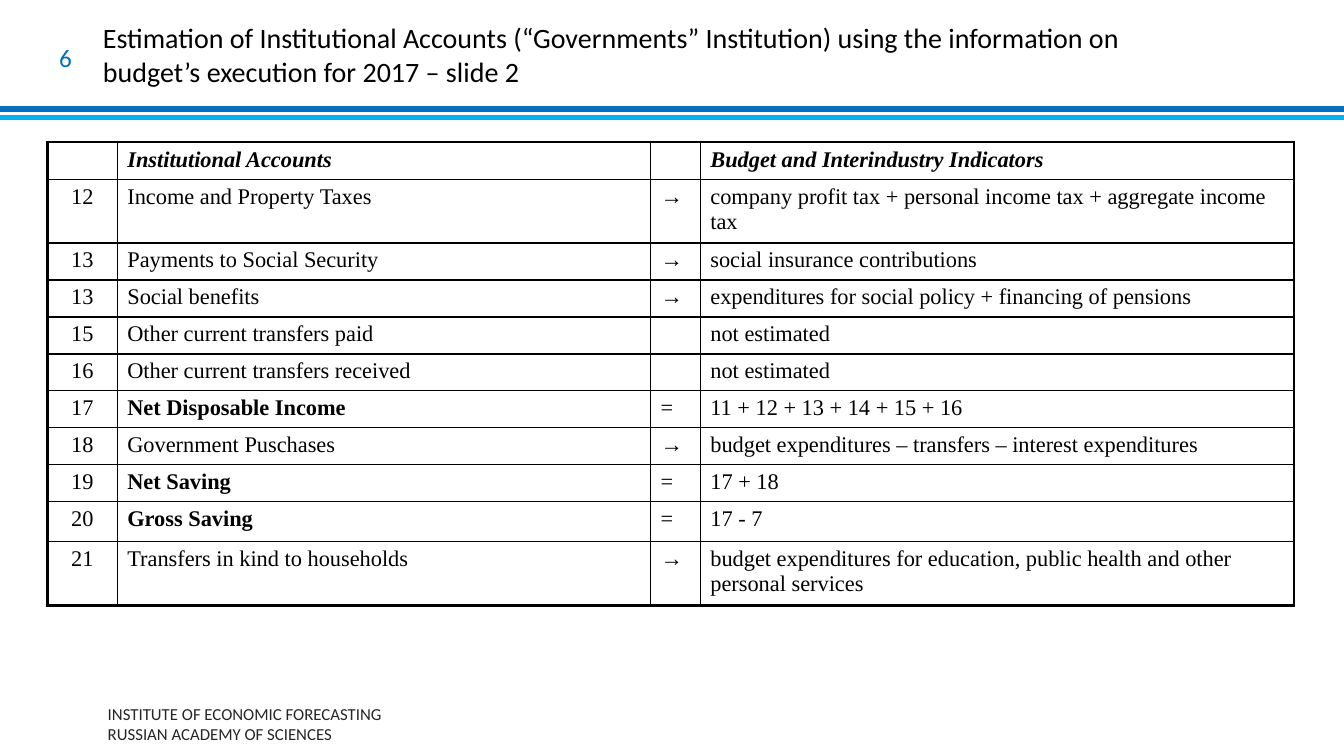
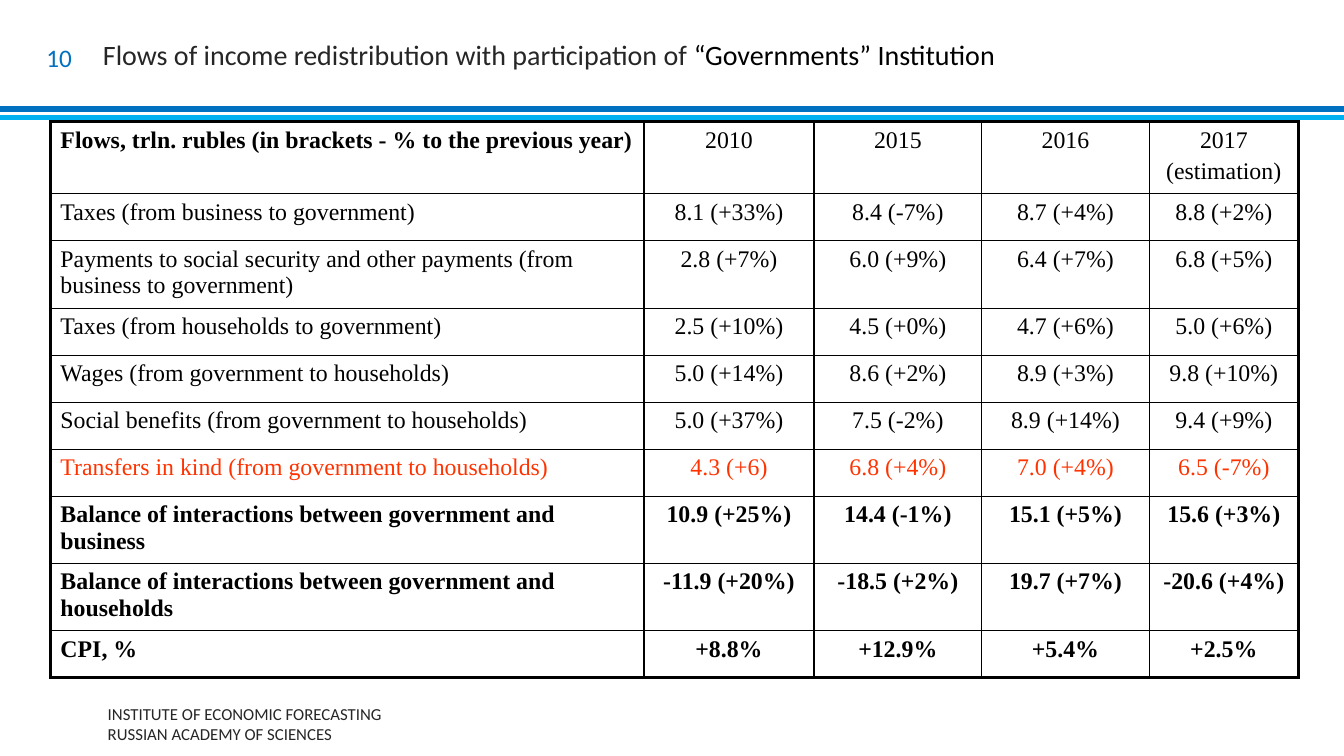
from dataclasses import dataclass

import lxml.etree
import pptx
import pptx.dml.color
import pptx.enum.shapes
import pptx.enum.text
import pptx.oxml.ns
import pptx.slide
import pptx.table
import pptx.text.text
import pptx.util

Pt = pptx.util.Pt
ALIGN = pptx.enum.text.PP_ALIGN

SLIDE_WIDTH, SLIDE_HEIGHT = 960, 540
BLACK, DARK_GRAY, RED = "000000", "262626", "FF3300"
BLUE, LIGHT_BLUE = "0070C0", "00B0F0"
HEADING_FONT, TABLE_FONT = "Calibri", "Times New Roman"
OUTER_BORDER, INNER_BORDER = 2.25, 1
FOOTER = "INSTITUTE OF ECONOMIC FORECASTING\nRUSSIAN ACADEMY OF SCIENCES"


@dataclass(frozen=True)
class Box:
    left: float
    top: float
    width: float
    height: float


@dataclass(frozen=True)
class TextPart:
    text: str
    color: str = BLACK


@dataclass(frozen=True)
class Row:
    cells: tuple[str, ...]
    height: float
    bold_columns: tuple[int, ...] = ()
    italic: bool = False
    color: str = BLACK


@dataclass(frozen=True)
class TableDesign:
    left: float
    top: float
    widths: tuple[float, ...]
    font_size: float
    centered_columns: tuple[int, ...]
    rows: tuple[Row, ...]


@dataclass(frozen=True)
class Page:
    number: int
    title: tuple[TextPart, ...]
    table: TableDesign


TITLE_BOX = Box(73.5, 0, 783, 78)
NUMBER_BOX = Box(14.5, 26.5, 44, 29)
FOOTER_BOX = Box(77, 502.5, 330, 29)

LINE, TWO_LINES = 25, 43
LABEL = (1,)
ACCOUNTS = TableDesign(
    left=33.8, top=101.5, widths=(50, 381, 35.5, 424), font_size=16,
    centered_columns=(0,),
    rows=(
        Row(("", "Institutional Accounts", "", "Budget and Interindustry Indicators"),
            LINE, (1, 3), italic=True),
        Row(("12", "Income and Property Taxes", "→",
             "company profit tax + personal income tax + aggregate income tax"), TWO_LINES),
        Row(("13", "Payments to Social Security", "→", "social insurance contributions"), LINE),
        Row(("13", "Social benefits", "→",
             "expenditures for social policy + financing of pensions"), LINE),
        Row(("15", "Other current transfers paid", "", "not estimated"), LINE),
        Row(("16", "Other current transfers received", "", "not estimated"), LINE),
        Row(("17", "Net Disposable Income", "=", "11 + 12 + 13 + 14 + 15 + 16"), LINE, LABEL),
        Row(("18", "Government Puschases", "→",
             "budget expenditures – transfers – interest expenditures"), LINE),
        Row(("19", "Net Saving", "=", "17 + 18"), LINE, LABEL),
        Row(("20", "Gross Saving", "=", "17 - 7"), 28.5, LABEL),
        Row(("21", "Transfers in kind to households", "→",
             "budget expenditures for education, public health and other personal services"),
            TWO_LINES),
    ),
)

FLOW, TALL_FLOW = 33.6, 45
ALL_COLUMNS = tuple(range(5))
FLOWS = TableDesign(
    left=36, top=87, widths=(424, 121.5, 119.75, 119.75, 106.5), font_size=17,
    centered_columns=ALL_COLUMNS[1:],
    rows=(
        Row(("Flows, trln. rubles (in brackets - % to the previous year)",
             "2010", "2015", "2016", "2017\n(estimation)"), 48.5, (0,)),
        Row(("Taxes (from business to government)",
             "8.1 (+33%)", "8.4 (-7%)", "8.7 (+4%)", "8.8 (+2%)"), FLOW),
        Row(("Payments to social security and other payments (from business to government)",
             "2.8 (+7%)", "6.0 (+9%)", "6.4 (+7%)", "6.8 (+5%)"), TALL_FLOW),
        Row(("Taxes (from households to government)",
             "2.5 (+10%)", "4.5 (+0%)", "4.7 (+6%)", "5.0 (+6%)"), FLOW),
        Row(("Wages (from government to households)",
             "5.0 (+14%)", "8.6 (+2%)", "8.9 (+3%)", "9.8 (+10%)"), FLOW),
        Row(("Social benefits (from government to households)",
             "5.0 (+37%)", "7.5 (-2%)", "8.9 (+14%)", "9.4 (+9%)"), FLOW),
        Row(("Transfers in kind (from government to households)",
             "4.3 (+6)", "6.8 (+4%)", "7.0 (+4%)", "6.5 (-7%)"), FLOW, color=RED),
        Row(("Balance of interactions between government and business",
             "10.9 (+25%)", "14.4 (-1%)", "15.1 (+5%)", "15.6 (+3%)"), TALL_FLOW, ALL_COLUMNS),
        Row(("Balance of interactions between government and households",
             "-11.9 (+20%)", "-18.5 (+2%)", "19.7 (+7%)", "-20.6 (+4%)"), TALL_FLOW, ALL_COLUMNS),
        Row(("CPI, %", "+8.8%", "+12.9%", "+5.4%", "+2.5%"), FLOW, ALL_COLUMNS),
    ),
)

PAGES = (
    Page(6, (TextPart("Estimation of Institutional Accounts (“Governments” Institution) using "
                      "the information on budget’s execution for 2017 – slide 2"),), ACCOUNTS),
    Page(10, (TextPart("Flows of income redistribution with participation of ", DARK_GRAY),
              TextPart("“Governments” Institution")), FLOWS),
)


def rgb(color: str) -> pptx.dml.color.RGBColor:
    return pptx.dml.color.RGBColor.from_string(color)


def set_font(font: pptx.text.text.Font, name: str, size: float, color: str) -> None:
    font.name = name
    font.size = Pt(size)
    font.color.rgb = rgb(color)


def add_text_frame(slide: pptx.slide.Slide, box: Box, margin: float = 0) -> pptx.text.text.TextFrame:
    """Add a wrapping text box, centred vertically, with equal margins."""
    shape = slide.shapes.add_textbox(Pt(box.left), Pt(box.top), Pt(box.width), Pt(box.height))
    frame = shape.text_frame
    frame.word_wrap = True
    frame.vertical_anchor = pptx.enum.text.MSO_ANCHOR.MIDDLE
    frame.margin_left = frame.margin_right = Pt(margin)
    frame.margin_top = frame.margin_bottom = Pt(margin / 2)
    return frame


def add_band(slide: pptx.slide.Slide, top: float, color: str) -> None:
    band = slide.shapes.add_connector(
        pptx.enum.shapes.MSO_CONNECTOR.STRAIGHT, 0, Pt(top), Pt(SLIDE_WIDTH), Pt(top))
    band.line.color.rgb = rgb(color)
    band.line.width = Pt(4)
    properties = band._element.spPr
    lxml.etree.SubElement(properties, pptx.oxml.ns.qn("a:effectLst"))


def add_frame(slide: pptx.slide.Slide, page: Page) -> None:
    """Draw the bands, footer, title and number that every slide has."""
    add_band(slide, 78, BLUE)
    add_band(slide, 84, LIGHT_BLUE)

    footer = add_text_frame(slide, FOOTER_BOX)
    footer.text = FOOTER
    for paragraph in footer.paragraphs:
        set_font(paragraph.font, HEADING_FONT, 12, DARK_GRAY)

    title = add_text_frame(slide, TITLE_BOX).paragraphs[0]
    for part in page.title:
        run = title.add_run()
        run.text = part.text
        set_font(run.font, HEADING_FONT, 20, part.color)

    number = add_text_frame(slide, NUMBER_BOX, margin=7.2).paragraphs[0]
    number.text = str(page.number)
    number.alignment = ALIGN.RIGHT
    set_font(number.font, HEADING_FONT, 18, BLUE)


def set_borders(cell: pptx.table._Cell, outer_sides: dict[str, bool]) -> None:
    """Give a cell black borders, thick on the sides that lie on the table's edge."""
    qn = pptx.oxml.ns.qn
    properties = cell._tc.get_or_add_tcPr()
    for side, is_outer in outer_sides.items():
        width = Pt(OUTER_BORDER if is_outer else INNER_BORDER)
        line = lxml.etree.SubElement(properties, qn(f"a:ln{side}"), w=str(int(width)))
        fill = lxml.etree.SubElement(line, qn("a:solidFill"))
        lxml.etree.SubElement(fill, qn("a:srgbClr"), val=BLACK)


def fill_cell(cell: pptx.table._Cell, row: Row, column: int, design: TableDesign) -> None:
    cell.text = row.cells[column]
    if not row.cells[column]:
        cell.margin_top = cell.margin_bottom = 0
    for index, paragraph in enumerate(cell.text_frame.paragraphs):
        if index:
            paragraph.space_before = Pt(design.font_size * 0.2)
        if column in design.centered_columns:
            paragraph.alignment = ALIGN.CENTER
        set_font(paragraph.font, TABLE_FONT, design.font_size, row.color)
        paragraph.font.bold = column in row.bold_columns
        paragraph.font.italic = row.italic


def add_table(slide: pptx.slide.Slide, design: TableDesign) -> None:
    row_count, column_count = len(design.rows), len(design.widths)
    table = slide.shapes.add_table(
        row_count, column_count, Pt(design.left), Pt(design.top),
        Pt(sum(design.widths)), Pt(sum(row.height for row in design.rows))).table
    table.first_row = table.horz_banding = False
    for column, width in enumerate(design.widths):
        table.columns[column].width = Pt(width)
    for row_index, row in enumerate(design.rows):
        table.rows[row_index].height = Pt(row.height)
        for column in range(column_count):
            cell = table.cell(row_index, column)
            fill_cell(cell, row, column, design)
            set_borders(cell, {
                "L": column == 0,
                "R": column == column_count - 1,
                "T": row_index == 0,
                "B": row_index == row_count - 1,
            })
            cell.fill.background()


def main() -> None:
    presentation = pptx.Presentation()
    presentation.slide_width = Pt(SLIDE_WIDTH)
    presentation.slide_height = Pt(SLIDE_HEIGHT)
    blank_layout = presentation.slide_layouts[6]
    for page in PAGES:
        slide = presentation.slides.add_slide(blank_layout)
        add_frame(slide, page)
        add_table(slide, page.table)
    presentation.save("out.pptx")


if __name__ == "__main__":
    main()
